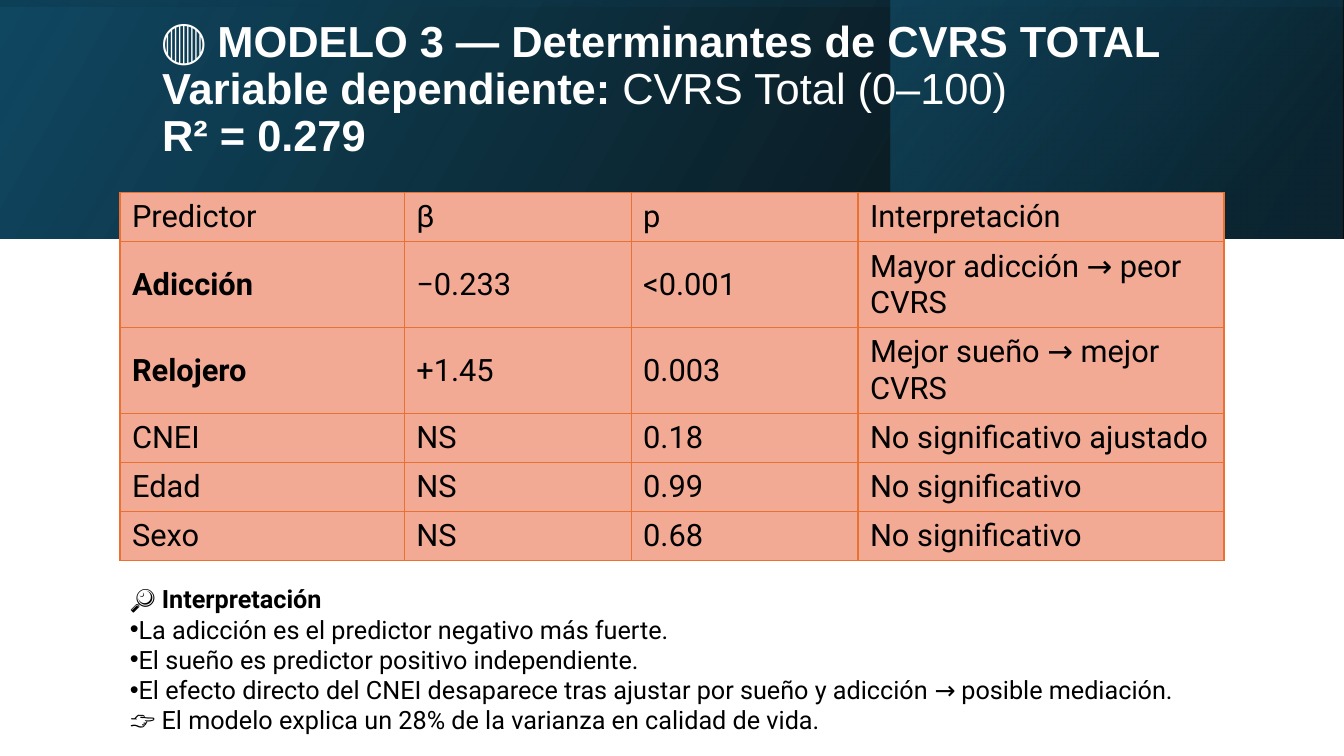
"""Build the slide on model 3, the determinants of total CVRS."""
from dataclasses import dataclass

from lxml.etree import SubElement
from pptx import Presentation
from pptx.dml.color import RGBColor
from pptx.enum.shapes import MSO_SHAPE
from pptx.enum.text import MSO_ANCHOR
from pptx.oxml.ns import qn
from pptx.util import Inches, Pt


@dataclass(frozen=True)
class Theme:
    white: str = "FFFFFF"
    black: str = "000000"
    night: str = "0B3041"
    deep: str = "104862"
    teal: str = "156082"
    salmon: str = "F2AA95"
    orange: str = "E97132"
    title_font: str = "Arial"
    body_font: str = "Roboto"
    title_size: int = 31
    table_size: int = 22
    note_size: int = 18


theme = Theme()
WIDTH, HEIGHT = 13.33, 7.5
BAND = 2.37
MARGIN = 1.19


def add_run(paragraph, text, font, size, color, bold=False):
    run = paragraph.add_run()
    run.text = text
    run.font.name, run.font.size, run.font.bold = font, Pt(size), bold
    run.font.color.rgb = RGBColor.from_string(color)


def add_text_area(left, top, width, height, anchor):
    frame = slide.shapes.add_textbox(*map(Inches, (left, top, width, height))).text_frame
    frame.word_wrap = True
    frame.vertical_anchor = anchor
    return frame


deck = Presentation()
deck.slide_width, deck.slide_height = Inches(WIDTH), Inches(HEIGHT)
slide = deck.slides.add_slide(deck.slide_layouts[6])

middle = (WIDTH - BAND) / 2
band_layers = [
    ((0, 0, WIDTH, BAND), 0, 330, [(0, theme.black, 96), (100, theme.deep, 100)]),
    ((WIDTH * 0.663, 0, WIDTH * 0.336, BAND), 0, 320,
     [(19, theme.night, 68), (100, theme.teal, 48)]),
    ((middle, -middle, BAND, WIDTH), 270, 350,
     [(23, theme.deep, 16), (99, theme.black, 45)]),
]
for box, rotation, angle, stops in band_layers:
    layer = slide.shapes.add_shape(MSO_SHAPE.RECTANGLE, *map(Inches, box))
    layer.shadow.inherit = False
    layer.line.fill.background()
    layer.rotation = rotation
    properties = layer._element.spPr
    properties.find(qn("a:xfrm")).set("flipH", "1")
    layer.fill.gradient()
    layer.fill.gradient_angle = 360 - angle
    for stop, (position, color, _) in zip(layer.fill.gradient_stops, stops):
        stop.position = position / 100
        stop.color.rgb = RGBColor.from_string(color)
    for tint, (_, _, opacity) in zip(properties.iter(qn("a:srgbClr")), stops):
        SubElement(tint, qn("a:alpha")).set("val", str(opacity * 1000))

title = add_text_area(1.51, 0.15, 10.63, 1.5, MSO_ANCHOR.MIDDLE)
title_style = (theme.title_font, theme.title_size, theme.white)
model = title.paragraphs[0]
outcome = title.add_paragraph()
model.line_spacing = outcome.line_spacing = 0.9
add_run(model, "🔴 MODELO 3 — Determinantes de CVRS TOTAL", *title_style, True)
add_run(outcome, "Variable dependiente:", *title_style, True)
add_run(outcome, " CVRS Total (0–100)", *title_style)
outcome.add_line_break()
add_run(outcome, "R² = 0.279", *title_style, True)

predictors = [
    ("Predictor", "β", "p", "Interpretación"),
    ("Adicción", "−0.233", "<0.001", "Mayor adicción → peor CVRS"),
    ("Relojero", "+1.45", "0.003", "Mejor sueño → mejor CVRS"),
    ("CNEI", "NS", "0.18", "No significativo ajustado"),
    ("Edad", "NS", "0.99", "No significativo"),
    ("Sexo", "NS", "0.68", "No significativo"),
]
significant = ("Adicción", "Relojero")
column_widths = (2.82, 2.25, 2.25, 3.63)
row_heights = [0.84 if row[0] in significant else 0.48 for row in predictors]
results = slide.shapes.add_table(
    len(predictors), len(column_widths), Inches(MARGIN), Inches(1.91),
    Inches(sum(column_widths)), Inches(sum(row_heights))).table
for column, width in zip(results.columns, column_widths):
    column.width = Inches(width)
for row, height, values in zip(results.rows, row_heights, predictors):
    row.height = Inches(height)
    for cell, value in zip(row.cells, values):
        cell.vertical_anchor = MSO_ANCHOR.MIDDLE
        cell.margin_left = cell.margin_right = Inches(0.12)
        cell.margin_top = cell.margin_bottom = Inches(0.06)
        cell_properties = cell._tc.get_or_add_tcPr()
        for side in ("a:lnL", "a:lnR", "a:lnT", "a:lnB"):
            border = SubElement(cell_properties, qn(side), w=str(Pt(1)))
            ink = SubElement(border, qn("a:solidFill"))
            SubElement(ink, qn("a:srgbClr"), val=theme.orange)
        cell.fill.solid()
        cell.fill.fore_color.rgb = RGBColor.from_string(theme.salmon)
        add_run(cell.text_frame.paragraphs[0], value, theme.body_font,
                theme.table_size, theme.black, value in significant)

findings = [
    ("🔎 Interpretación", False, True),
    ("La adicción es el predictor negativo más fuerte.", True, False),
    ("El sueño es predictor positivo independiente.", True, False),
    ("El efecto directo del CNEI desaparece tras ajustar por sueño y adicción"
     " → posible mediación.", True, False),
    ("👉 El modelo explica un 28% de la varianza en calidad de vida.", False, False),
]
reading = add_text_area(MARGIN, 5.74, WIDTH - MARGIN, 1.62, MSO_ANCHOR.TOP)
for index, (finding, bulleted, bold) in enumerate(findings):
    line = reading.add_paragraph() if index else reading.paragraphs[0]
    if bulleted:
        line_properties = line._p.get_or_add_pPr()
        SubElement(line_properties, qn("a:buFont"), typeface=theme.title_font)
        SubElement(line_properties, qn("a:buChar"), char="•")
    add_run(line, finding, theme.body_font, theme.note_size, theme.black, bold)

deck.save("out.pptx")
